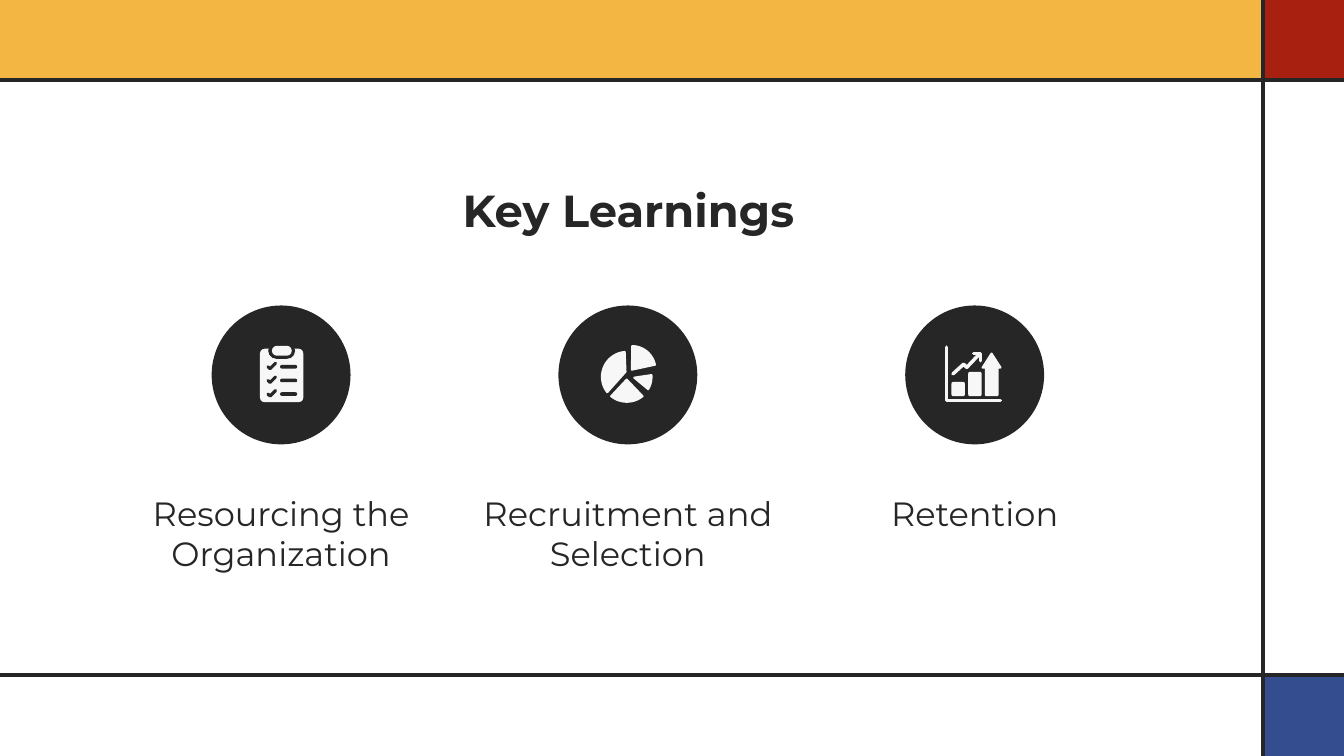
"""Build the Key Learnings slide with three icon columns."""
import math
from lxml import etree
from pptx import Presentation
from pptx import util as u
from pptx.dml.color import RGBColor
from pptx.enum import shapes, text
from pptx.oxml.ns import qn

COLORS = {"ink": "262626", "paper": "F7F7F7", "yellow": "F4B643",
          "red": "A82110", "blue": "344D8F"}
FONT = "Montserrat"
SLIDE_WIDTH, SLIDE_HEIGHT = 960, 540
BAND = 57.6
RIGHT_RULE = 902.2
CIRCLE_SIZE = 99.2
CIRCLE_Y = 267.8
FIRST_COLUMN, COLUMN_PITCH = 200.8, 247.7
LABEL_WIDTH = 237.6


def rgb(name):
    """Return the colour stored under a name."""
    return RGBColor.from_string(COLORS[name])


def add_block(container, kind, left, top, width, height, color, rounding=None):
    """Add a filled preset shape without an outline."""
    shape = container.add_shape(kind, u.Pt(left), u.Pt(top), u.Pt(width), u.Pt(height))
    shape.shadow.inherit = False
    shape.fill.solid()
    shape.fill.fore_color.rgb = rgb(color)
    shape.line.fill.background()
    if rounding is not None:
        shape.adjustments[0] = rounding
    return shape


def add_rule(slide, x1, y1, x2, y2):
    """Add a dark straight rule."""
    rule = slide.shapes.add_connector(shapes.MSO_CONNECTOR.STRAIGHT,
                                      u.Pt(x1), u.Pt(y1), u.Pt(x2), u.Pt(y2))
    rule.line.color.rgb = rgb("ink")
    rule.line.width = u.Pt(2.75)
    etree.SubElement(rule.element.spPr, qn("a:effectLst"))


def add_outline(container, center, points, color, width, closed=False):
    """Add a round-cornered stroke, filled when closed, around a center."""
    start, *rest = [(u.Pt(center[0] + x), u.Pt(center[1] + y)) for x, y in points]
    builder = container.build_freeform(*start, scale=1.0)
    builder.add_line_segments(rest, close=closed)
    shape = builder.convert_to_shape()
    shape.shadow.inherit = False
    if closed:
        shape.fill.solid()
        shape.fill.fore_color.rgb = rgb(color)
    else:
        shape.fill.background()
    shape.line.color.rgb = rgb(color)
    shape.line.width = u.Pt(width)
    line = shape.element.spPr.find(qn("a:ln"))
    line.set("cap", "rnd")
    etree.SubElement(line, qn("a:round"))


def add_rounded(container, center, left, top, width, height, color, rounding):
    """Add a rounded rectangle placed relative to a center."""
    add_block(container, shapes.MSO_SHAPE.ROUNDED_RECTANGLE,
              center[0] + left, center[1] + top, width, height, color, rounding)


def format_text(shape, wording, size, bold=False):
    """Fill a shape with one centred paragraph anchored at the top."""
    frame = shape.text_frame
    frame.word_wrap = True
    frame.auto_size = text.MSO_AUTO_SIZE.NONE
    frame.vertical_anchor = text.MSO_ANCHOR.TOP
    frame.text = wording
    paragraph = frame.paragraphs[0]
    paragraph.alignment = text.PP_ALIGN.CENTER
    paragraph.font.name = FONT
    paragraph.font.size = u.Pt(size)
    paragraph.font.bold = bold
    paragraph.font.color.rgb = rgb("ink")


def draw_checklist(container, center):
    """Draw a clipboard with three ticked rows."""
    add_rounded(container, center, -15.1, -18.7, 31, 38.2, "paper", 0.11)
    add_rounded(container, center, -9.2, -23, 19.2, 11.5, "ink", 0.5)
    add_rounded(container, center, -6.6, -20.8, 14.2, 7.1, "paper", 0.5)
    for row in range(3):
        y = -5.8 + 9.75 * row
        add_outline(container, center, [(-9.4, y), (-7.9, y + 1.4), (-4, y - 2.5)],
                    "ink", 2.2)
        add_rounded(container, center, -0.7, y - 1.3, 12.2, 2.6, "ink", 0.5)


def draw_pie(container, center):
    """Draw a pie of four separate slices."""
    lower_pivot, upper_pivot = (-0.7, 1.4), (2.9, -3.8)
    slices = [(upper_pivot, 16.8, (2.9, -3.8), 1, 78),
              (lower_pivot, 17.6, (4.6, 2), 86, 120),
              (lower_pivot, 17.8, (-0.8, 3.4), 141, 219),
              (lower_pivot, 17.8, (-1.7, -2.2), 232, 355)]
    for pivot, radius, apex, start, end in slices:
        angles = [math.radians(start + (end - start) * step / 24) for step in range(25)]
        arc = [(pivot[0] + radius * math.sin(angle), pivot[1] - radius * math.cos(angle))
               for angle in angles]
        add_outline(container, center, [apex] + arc, "paper", 1.5, closed=True)


def draw_growth(container, center):
    """Draw a bar chart with rising arrows."""
    strokes = [[(-20.2, -19.8), (-20.2, 18.4), (18.4, 18.4)],
               [(-15.5, -0.7), (-7.9, -7.6), (-5.6, -5.4), (3.6, -15.1)],
               [(-0.7, -15.1), (4, -15.1), (4, -10.1)]]
    for points in strokes:
        add_outline(container, center, points, "paper", 2.5)
    for left, top in [(-16.6, 5), (-4.6, -2.2)]:
        add_rounded(container, center, left, top, 9.6, 15.2 - top, "paper", 0.14)
    arrow = [(12.1, -15.2), (18.5, -5.2), (16.4, -5.2), (16.4, 14.4),
             (8, 14.4), (8, -5.2), (5.7, -5.2)]
    add_outline(container, center, arrow, "paper", 1.5, closed=True)


def add_column(slide, index, wording, draw_icon):
    """Add one circle with its icon and label."""
    x = FIRST_COLUMN + COLUMN_PITCH * index
    add_block(slide.shapes, shapes.MSO_SHAPE.OVAL, x - CIRCLE_SIZE / 2,
              CIRCLE_Y - CIRCLE_SIZE / 2, CIRCLE_SIZE, CIRCLE_SIZE, "ink")
    draw_icon(slide.shapes.add_group_shape().shapes, (x, CIRCLE_Y))
    label = slide.shapes.add_textbox(u.Pt(x - LABEL_WIDTH / 2), u.Pt(348.5),
                                     u.Pt(LABEL_WIDTH), u.Pt(65.5))
    format_text(label, wording, 24)


def add_frame(slide):
    """Add the coloured blocks and the rules around the content."""
    corner = SLIDE_WIDTH - RIGHT_RULE
    bottom = SLIDE_HEIGHT - BAND
    for left, top, width, color in [(RIGHT_RULE, bottom, corner, "blue"),
                                    (RIGHT_RULE, 0, corner, "red"),
                                    (0, 0, RIGHT_RULE, "yellow")]:
        add_block(slide.shapes, shapes.MSO_SHAPE.RECTANGLE, left, top, width, BAND, color)
    for y in (57.1, bottom):
        add_rule(slide, 0, y, SLIDE_WIDTH, y)
    add_rule(slide, RIGHT_RULE, 0, RIGHT_RULE, SLIDE_HEIGHT)


def main():
    """Build and save the presentation."""
    presentation = Presentation()
    presentation.slide_width = u.Pt(SLIDE_WIDTH)
    presentation.slide_height = u.Pt(SLIDE_HEIGHT)
    slide = presentation.slides.add_slide(presentation.slide_layouts[5])
    add_frame(slide)
    title = slide.shapes.title
    title.left, title.top = u.Pt(182.9), u.Pt(126.7)
    title.width, title.height = u.Pt(532), u.Pt(46)
    format_text(title, "Key Learnings", 32, bold=True)
    columns = [("Resourcing the Organization", draw_checklist),
               ("Recruitment and Selection", draw_pie),
               ("Retention", draw_growth)]
    for index, (wording, draw_icon) in enumerate(columns):
        add_column(slide, index, wording, draw_icon)
    presentation.save("out.pptx")


if __name__ == "__main__":
    main()
